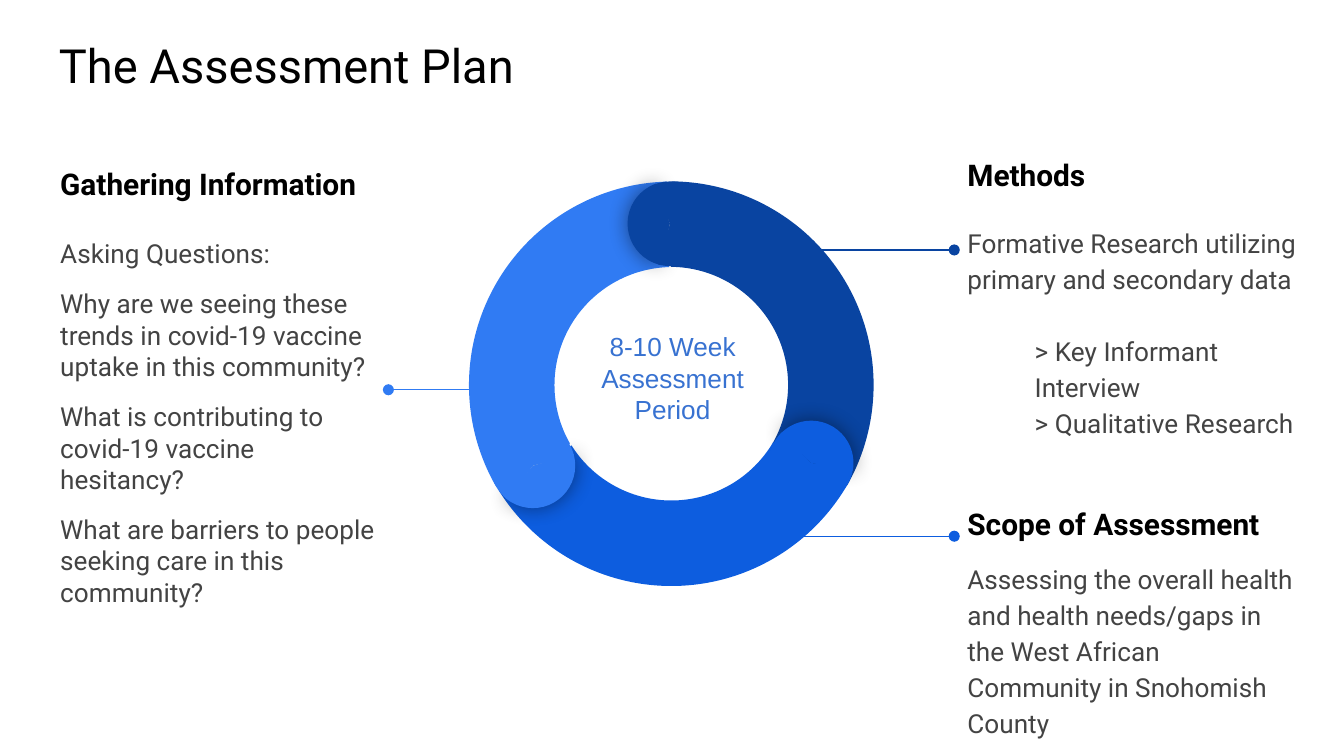
from dataclasses import dataclass

from lxml import etree
from pptx import Presentation
from pptx.dml.color import RGBColor
from pptx.enum.shapes import MSO_CONNECTOR, MSO_SHAPE
from pptx.enum.text import MSO_ANCHOR, PP_ALIGN
from pptx.oxml import parse_xml
from pptx.oxml.ns import nsdecls, qn
from pptx.util import Inches, Pt

BLACK = RGBColor(0x00, 0x00, 0x00)
GRAY = RGBColor(0x43, 0x43, 0x43)
NAVY = RGBColor(0x09, 0x44, 0xA1)
BLUE = RGBColor(0x0D, 0x5D, 0xDF)
SKY = RGBColor(0x30, 0x7B, 0xF3)
LABEL_BLUE = RGBColor(0x38, 0x72, 0xD1)

RING_SIZE = 3.03
CAP_SIZE = 0.63
CAP_SHADOW = (
    f'<a:effectLst {nsdecls("a")}><a:outerShdw blurRad="{Pt(11.2)}" algn="ctr" '
    'rotWithShape="0"><a:srgbClr val="000000"><a:alpha val="43000"/></a:srgbClr>'
    "</a:outerShdw></a:effectLst>"
)


@dataclass
class Line:
    text: str
    size: float = 14
    color: RGBColor = GRAY
    bold: bool = False
    font: str = "Roboto"
    before: float = 0
    spacing: float = 1
    indent: float = 0
    align: PP_ALIGN = PP_ALIGN.LEFT


@dataclass
class TextBlock:
    left: float
    top: float
    width: float
    height: float
    lines: list[Line]
    inset_top: float = 0.1
    inset_bottom: float = 0.1
    anchor: MSO_ANCHOR = MSO_ANCHOR.MIDDLE


@dataclass
class Segment:
    """A third of the ring, with the round cap at its leading end."""
    color: RGBColor
    left: float
    top: float
    rotation: float
    sweep: tuple[float, float, float]
    cap_left: float
    cap_top: float
    cap_rotation: float


@dataclass
class Pointer:
    color: RGBColor
    start: float
    end: float
    y: float


def heading(text: str) -> Line:
    return Line(text, 16, BLACK, bold=True)


TEXT_BLOCKS = [
    TextBlock(0.35, 2.17, 2.56, 1.41, [
        heading("Gathering Information"),
        Line("Asking Questions:", before=19.5),
        Line("Why are we seeing these trends in covid-19 vaccine uptake "
             "in this community?", before=10),
        Line("What is contributing to covid-19 vaccine hesitancy?", before=10),
        Line("What are barriers to people seeking care in this community?", before=10),
    ]),
    TextBlock(7.1, 1.16, 2.88, 2.11, [
        heading("Methods"),
        Line("Formative Research utilizing primary and secondary data",
             before=16.5, spacing=1.15),
        Line("> Key Informant Interview", before=19.3, spacing=1.15, indent=0.5),
        Line("> Qualitative Research", spacing=1.15, indent=0.5),
    ], inset_top=0.3, inset_bottom=0.3),
    TextBlock(7.1, 3.99, 2.64, 1.41, [
        heading("Scope of Assessment"),
        Line("Assessing the overall health and health needs/gaps in the West "
             "African Community in Snohomish County", before=9.4, spacing=1.15),
    ], inset_bottom=0.23),
    TextBlock(0.34, 0.17, 9.32, 0.63, [Line("The Assessment Plan", 25.2, BLACK)]),
    TextBlock(4.34, 2.36, 1.33, 0.91, [
        Line("8-10 Week Assessment Period", color=LABEL_BLUE, font="Arial",
             align=PP_ALIGN.CENTER),
    ], anchor=MSO_ANCHOR.TOP),
]

POINTERS = [
    Pointer(SKY, 3.58, 2.89, 2.9),
    Pointer(NAVY, 5.7, 7.1, 1.86),
    Pointer(BLUE, 5.7, 7.1, 3.99),
]

SEGMENTS = [
    Segment(NAVY, 3.47, 1.35, 60, (126.23, 197.82, 0.21), 4.67, 1.35, 0.7),
    Segment(BLUE, 3.48, 1.33, 180, (126.23, 196.63, 0.21), 5.72, 3.13, 120.7),
    Segment(SKY, 3.49, 1.35, 300, (126.23, 197.03, 0.21), 3.65, 3.15, 240.6),
]


def add_text(page, block: TextBlock) -> None:
    box = page.shapes.add_textbox(Inches(block.left), Inches(block.top),
                                  Inches(block.width), Inches(block.height))
    frame = box.text_frame
    frame.word_wrap = True
    frame.vertical_anchor = block.anchor
    frame.margin_left = frame.margin_right = Inches(0.1)
    frame.margin_top = Inches(block.inset_top)
    frame.margin_bottom = Inches(block.inset_bottom)
    for index, line in enumerate(block.lines):
        para = frame.add_paragraph() if index else frame.paragraphs[0]
        para.text = line.text
        para.alignment = line.align
        para.space_before = Pt(line.before)
        para.line_spacing = line.spacing
        para.font.name = line.font
        para.font.size = Pt(line.size)
        para.font.bold = line.bold
        para.font.color.rgb = line.color
        if line.indent:
            properties = para._p.get_or_add_pPr()
            properties.set("marL", str(Inches(line.indent)))
            properties.set("indent", "0")


def add_pointer(page, pointer: Pointer) -> None:
    connector = page.shapes.add_connector(
        MSO_CONNECTOR.STRAIGHT, Inches(pointer.start), Inches(pointer.y),
        Inches(pointer.end), Inches(pointer.y))
    connector.line.color.rgb = pointer.color
    connector.line.width = Pt(0.75)
    etree.SubElement(connector.line._get_or_add_ln(), qn("a:tailEnd"), type="oval")
    etree.SubElement(connector._element.spPr, qn("a:effectLst"))


def add_arc(page, kind: MSO_SHAPE, left: float, top: float, size: float,
            rotation: float, color: RGBColor, adjustments: tuple[float, ...]):
    shape = page.shapes.add_shape(kind, Inches(left), Inches(top),
                                  Inches(size), Inches(size))
    shape.rotation = rotation
    for index, value in enumerate(adjustments):
        shape.adjustments[index] = value
    shape.fill.solid()
    shape.fill.fore_color.rgb = color
    shape.line.fill.background()
    shape.shadow.inherit = False
    return shape


def add_cap(page, segment: Segment) -> None:
    """Draw a shaded leading half and a plain half that hides the inner shadow."""
    place = (segment.cap_left, segment.cap_top, CAP_SIZE)
    front = add_arc(page, MSO_SHAPE.PIE, *place, segment.cap_rotation,
                    segment.color, (61.9, 149.96))
    properties = front._element.spPr
    properties.replace(properties.find(qn("a:effectLst")), parse_xml(CAP_SHADOW))
    add_arc(page, MSO_SHAPE.PIE, *place, (segment.rotation + 120) % 360,
            segment.color, (40.28, 171.84))


def main() -> None:
    deck = Presentation()
    deck.slide_width = Inches(10)
    deck.slide_height = deck.slide_width * 9 // 16
    page = deck.slides.add_slide(deck.slide_layouts[6])
    for pointer in POINTERS:
        add_pointer(page, pointer)
    for segment in SEGMENTS:
        add_arc(page, MSO_SHAPE.BLOCK_ARC, segment.left, segment.top, RING_SIZE,
                segment.rotation, segment.color, segment.sweep)
    for segment in reversed(SEGMENTS):
        add_cap(page, segment)
    for block in TEXT_BLOCKS:
        add_text(page, block)
    deck.save("out.pptx")


if __name__ == "__main__":
    main()
